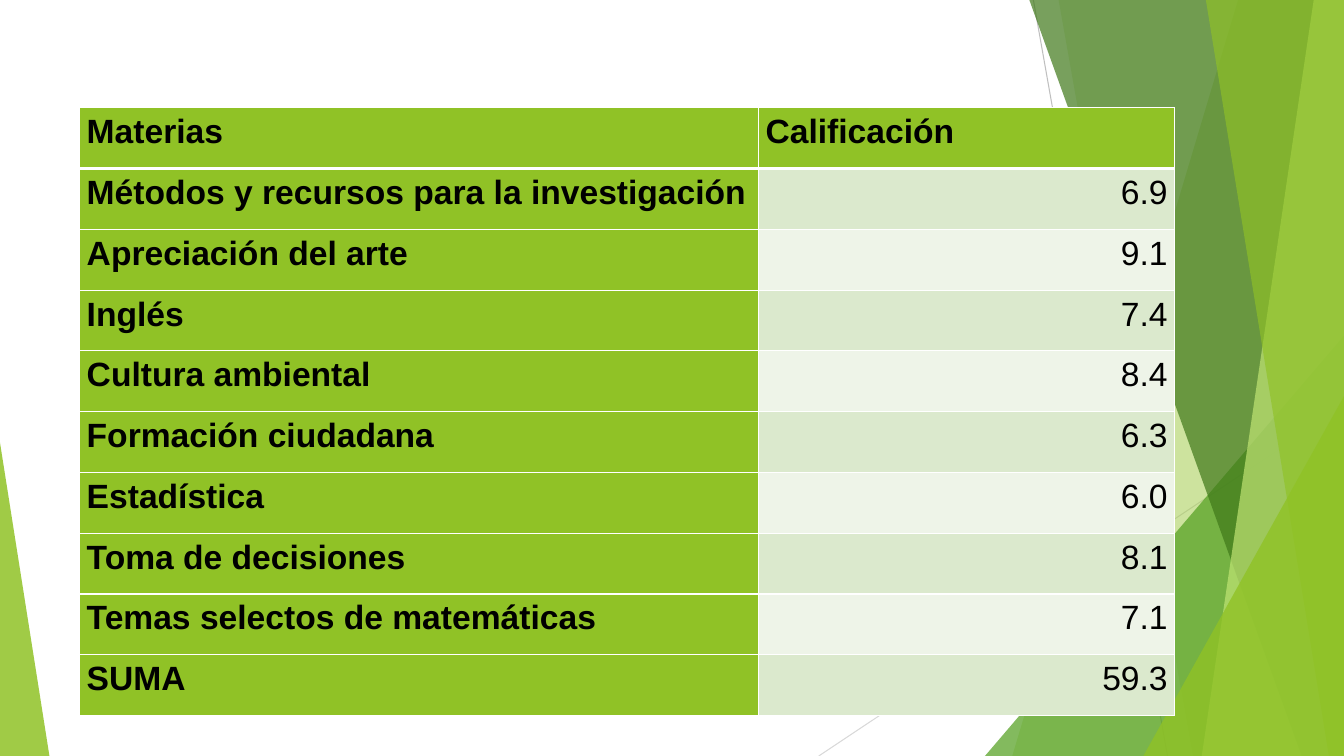
from lxml import etree
from pptx import Presentation
from pptx.dml.color import RGBColor
from pptx.enum.shapes import MSO_CONNECTOR, MSO_SHAPE
from pptx.enum.text import PP_ALIGN
from pptx.oxml.ns import qn
from pptx.util import Emu, Inches, Pt

TRIANGLE = MSO_SHAPE.ISOSCELES_TRIANGLE
STRAIGHT = MSO_CONNECTOR.STRAIGHT
LEFT, RIGHT = PP_ALIGN.LEFT, PP_ALIGN.RIGHT

GREEN, WHITE, BLACK = "90C226", "FFFFFF", "000000"
BANDS = ("DBE9CD", "EEF4E8")
FONT = "Arial"

# Positions are percentages of the box: x1, y1, x2, y2, colour
LINES = [
    (76.89, 0, 86.87, 100, "BFBFBF"),
    (100, 53.73, 60.92, 100, "D9D9D9"),
]
# Back to front. Band: top x, bottom x. Triangle: left, top, right, apex.
FACETS = [
    ((92.12, 75.32), GREEN, 30),
    ((78.77, 88.75), GREEN, 20),
    ((73.29, 44.4, 100, 1), "54A021", 72),
    ((76.59, 96.85), "3F7819", 70),
    ((97.75, 89.42), "C0E474", 70),
    ((89.72, 98.87), GREEN, 65),
    ((85.07, 52.4, 100, 1), GREEN, 80),
    ((0, 58.53, 3.68, 0), GREEN, 85),
]
GRADES = [
    ("Materias", "Calificación"),
    ("Métodos y recursos para la investigación", "6.9"),
    ("Apreciación del arte", "9.1"),
    ("Inglés", "7.4"),
    ("Cultura ambiental", "8.4"),
    ("Formación ciudadana", "6.3"),
    ("Estadística", "6.0"),
    ("Toma de decisiones", "8.1"),
    ("Temas selectos de matemáticas", "7.1"),
    ("SUMA", "59.3"),
]


def set_color(fmt, color, opacity=100):
    """Apply a solid hex colour to a fill."""
    fmt.solid()
    fmt.fore_color.rgb = RGBColor.from_string(color)
    if opacity < 100:
        clr = fmt._xPr.find(qn("a:solidFill"))[0]
        etree.SubElement(clr, qn("a:alpha"), val=str(opacity * 1000))


def place(box, x, y):
    """Turn percentages of the box into slide coordinates."""
    left, top, width, height = box
    return Emu(int(left + width * x / 100)), Emu(int(top + height * y / 100))


def add_backdrop(slide, box):
    # Thin lines
    for x1, y1, x2, y2, color in LINES:
        line = slide.shapes.add_connector(
            STRAIGHT, *place(box, x1, y1), *place(box, x2, y2))
        set_color(line.line.fill, color)
        line.line.width = Pt(0.75)
        etree.SubElement(line._element.spPr, qn("a:effectLst"))

    # Translucent bands and triangles
    for geometry, color, opacity in FACETS:
        if len(geometry) == 2:
            top_x, bottom_x = geometry
            corners = [place(box, x, y) for x, y in
                       ((top_x, 0), (100, 0), (100, 100), (bottom_x, 100))]
            builder = slide.shapes.build_freeform(*corners[0])
            builder.add_line_segments(corners[1:], close=True)
            sp = builder.convert_to_shape()
        else:
            x1, y1, x2, apex = geometry
            left, top = place(box, x1, y1)
            right, bottom = place(box, x2, 100)
            sp = slide.shapes.add_shape(
                TRIANGLE, left, top, right - left, bottom - top)
            sp.adjustments[0] = apex
        sp.shadow.inherit = False
        set_color(sp.fill, color, opacity)
        sp.line.fill.background()


def set_borders(cell, top, bottom):
    tc_pr = cell._tc.get_or_add_tcPr()
    for side, width in (("L", 1), ("R", 1), ("T", top), ("B", bottom)):
        ln = etree.SubElement(tc_pr, qn(f"a:ln{side}"), w=str(Pt(width)))
        fill = etree.SubElement(ln, qn("a:solidFill"))
        etree.SubElement(fill, qn("a:srgbClr"), val=WHITE)


def fill_cell(cell, text, color, bold, align):
    cell.margin_left = cell.margin_right = Inches(0.07)
    cell.margin_top = cell.margin_bottom = 0
    set_color(cell.fill, color)
    p = cell.text_frame.paragraphs[0]
    p.alignment = align
    p.line_spacing = 1.15
    r = p.add_run()
    r.text = text
    r.font.name = FONT
    r.font.size = Pt(24)
    r.font.bold = bold
    set_color(r.font.fill, BLACK)


def add_grades(slide, box):
    width, height = box[2:]
    table = slide.shapes.add_table(len(GRADES), 2, *box).table
    table.first_row = table.horz_banding = False
    for column, share in zip(table.columns, (0.62, 0.38)):
        column.width = int(width * share)
    for i, texts in enumerate(GRADES):
        table.rows[i].height = int(height / len(GRADES))
        for j, text in enumerate(texts):
            cell = table.cell(i, j)
            is_value = i > 0 and j > 0
            # Heavier rule between the header and the body
            set_borders(cell, 3 if i == 1 else 1, 3 if i == 0 else 1)
            fill_cell(cell, text, BANDS[(i - 1) % 2] if is_value else GREEN,
                      not is_value, RIGHT if is_value else LEFT)


def main():
    prs = Presentation()
    prs.slide_width, prs.slide_height = Inches(13.33), Inches(7.5)
    slide = prs.slides.add_slide(prs.slide_layouts[6])
    set_color(slide.background.fill, WHITE)
    page = (0, 0, prs.slide_width, prs.slide_height)
    add_backdrop(slide, page)
    left, top = place(page, 5.93, 14.27)
    width, height = place(page, 81.47, 80.4)
    add_grades(slide, (left, top, width, height))
    prs.save("out.pptx")


if __name__ == "__main__":
    main()
